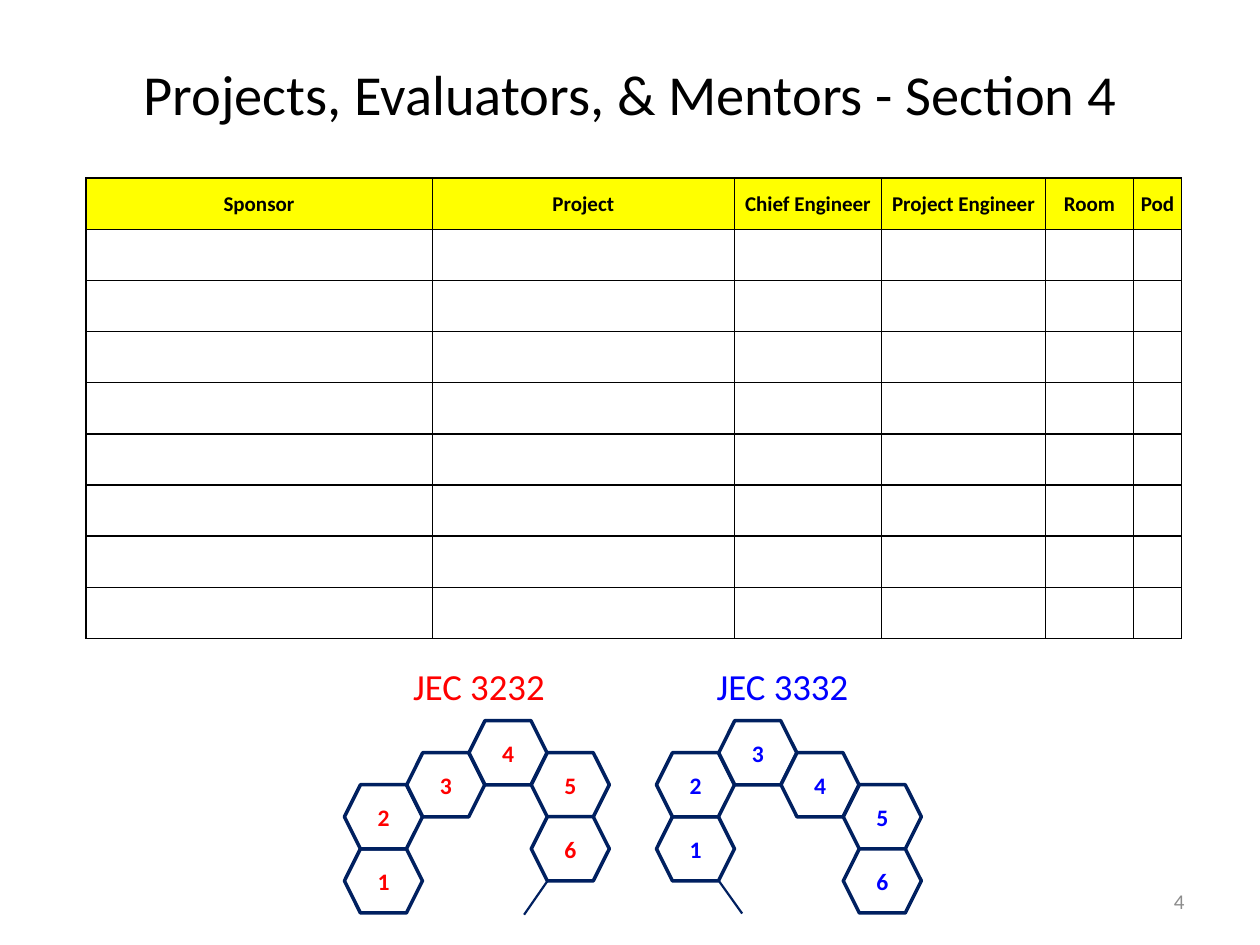
from lxml import etree
from pptx import Presentation
from pptx.dml.color import RGBColor
from pptx.enum.shapes import MSO_CONNECTOR, MSO_SHAPE
from pptx.enum.text import MSO_ANCHOR, PP_ALIGN
from pptx.oxml.ns import qn
from pptx.util import Pt

HEXAGON, RECT = MSO_SHAPE.HEXAGON, MSO_SHAPE.RECTANGLE
STRAIGHT = MSO_CONNECTOR.STRAIGHT
MIDDLE, TOP = MSO_ANCHOR.MIDDLE, MSO_ANCHOR.TOP
LEFT, CENTER, RIGHT = PP_ALIGN.LEFT, PP_ALIGN.CENTER, PP_ALIGN.RIGHT

COLORS = {
    "black": "000000", "white": "FFFFFF", "yellow": "FFFF00", "gray": "8C8C8C",
    "navy": "002060", "red": "FF0000", "blue": "0000FF",
}
HEADERS = ["Sponsor", "Project", "Chief Engineer", "Project Engineer", "Room", "Pod"]
COL_WIDTHS = [198, 172.6, 84.2, 93.6, 50.4, 27.4]
ROW_COUNT = 9
HEX_W, HEX_H = 44.6, 36.7
STEP_X, STEP_Y = 35.6, 18.3
LEFT_POD = [(0, 4), (0, 2), (1, 1), (2, 0), (3, 1), (3, 3)]
RIGHT_POD = [(0, 3), (0, 1), (1, 0), (2, 1), (3, 2), (3, 4)]


def rgb(name):
    return RGBColor.from_string(COLORS[name])


def write(tf, text, size=12, color="black", bold=False, align=CENTER,
          anchor=MIDDLE, wrap=True):
    tf.word_wrap = wrap
    tf.vertical_anchor = anchor
    p = tf.paragraphs[0]
    p.alignment = align
    r = p.add_run()
    r.text = text
    r.font.name = "Calibri"
    r.font.size = Pt(size)
    r.font.bold = bold
    r.font.color.rgb = rgb(color)


def add_text(s, box, text, **fmt):
    sp = s.shapes.add_textbox(*map(Pt, box))
    write(sp.text_frame, text, **fmt)


def add_box(s, kind, box, text, line=None, **fmt):
    sp = s.shapes.add_shape(kind, *map(Pt, box))
    sp.shadow.inherit = False
    sp.fill.solid()
    sp.fill.fore_color.rgb = rgb("white")
    if line:
        sp.line.color.rgb = rgb(line)
        sp.line.width = Pt(2)
    else:
        sp.line.fill.background()
    write(sp.text_frame, text, **fmt)


def add_line(s, x1, y1, x2, y2):
    cn = s.shapes.add_connector(STRAIGHT, Pt(x1), Pt(y1), Pt(x2), Pt(y2))
    cn.line.color.rgb = rgb("navy")
    cn.line.width = Pt(1.25)
    etree.SubElement(cn._element.spPr, qn("a:effectLst"))


def set_borders(cell):
    tc_pr = cell._tc.get_or_add_tcPr()
    for i, side in enumerate(("lnL", "lnR", "lnT", "lnB")):
        ln = etree.Element(qn(f"a:{side}"), w=str(Pt(1)))
        fill = etree.SubElement(ln, qn("a:solidFill"))
        etree.SubElement(fill, qn("a:srgbClr"), val=COLORS["black"])
        tc_pr.insert(i, ln)


def add_projects_table(s, x, y, w, h):
    tbl = s.shapes.add_table(ROW_COUNT, len(HEADERS), Pt(x), Pt(y), Pt(w), Pt(h)).table
    for col, width in zip(tbl.columns, COL_WIDTHS):
        col.width = Pt(width)
    for i, row in enumerate(tbl.rows):
        row.height = Pt(h / ROW_COUNT)
        for cell, header in zip(row.cells, HEADERS):
            cell.fill.solid()
            cell.fill.fore_color.rgb = rgb("white" if i else "yellow")
            cell.margin_left = cell.margin_right = cell.margin_top = Pt(0.72)
            cell.margin_bottom = 0
            cell.vertical_anchor = MIDDLE
            set_borders(cell)
            if i == 0:
                write(cell.text_frame, header, bold=True)


def add_pod_map(s, x, y, room, label_x, color, cells, door):
    add_box(s, RECT, (label_x, y - 36, 90.7, 36), room, size=21, color=color,
            align=LEFT, anchor=TOP, wrap=False)
    add_line(s, *door)
    for number, (col, row) in enumerate(cells, 1):
        box = (x + col * STEP_X, y + row * STEP_Y, HEX_W, HEX_H)
        add_box(s, HEXAGON, box, str(number), line="navy", size=13.5,
                color=color, bold=True, wrap=False)


def main():
    prs = Presentation()
    prs.slide_width, prs.slide_height = Pt(720), Pt(540)
    s = prs.slides.add_slide(prs.slide_layouts[6])
    add_text(s, (36, 21.6, 648, 62.6), "Projects, Evaluators, & Mentors - Section 4",
             size=32.3)
    add_projects_table(s, 49, 101.8, sum(COL_WIDTHS), 263.25)
    add_text(s, (516, 500.5, 168, 28.8), "4", color="gray", align=RIGHT)
    add_pod_map(s, 196.8, 411.8, "JEC 3232", 229, "red", LEFT_POD,
                (338.4, 466.6, 299.5, 522.7))
    add_pod_map(s, 375.1, 411.8, "JEC 3332", 402.5, "blue", RIGHT_POD,
                (384.5, 466.6, 424.1, 522))
    prs.save("out.pptx")


if __name__ == "__main__":
    main()
